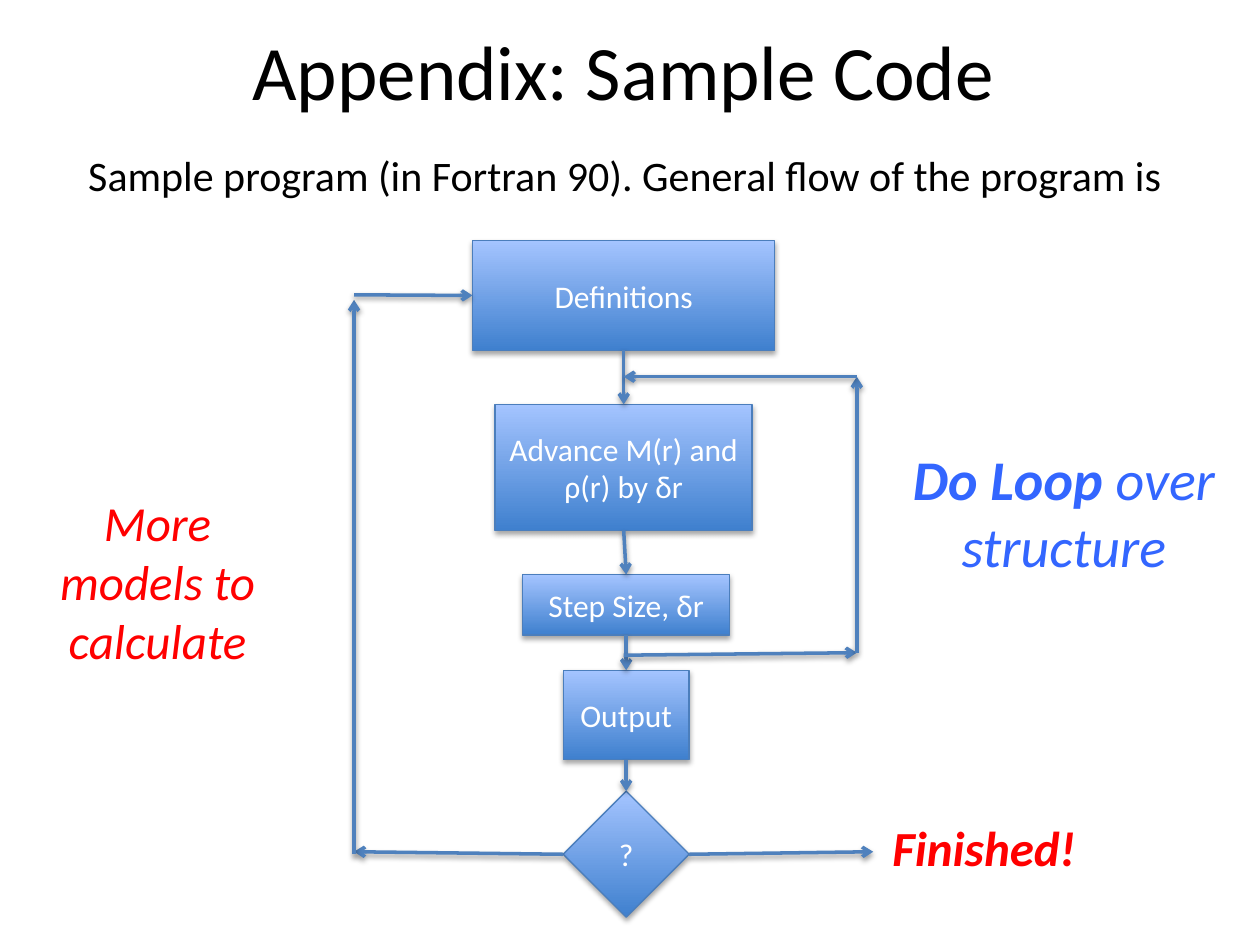
from dataclasses import dataclass

from lxml import etree
from pptx import Presentation
from pptx.dml.color import RGBColor
from pptx.enum import shapes, text
from pptx.oxml import ns
from pptx.util import Inches, Pt


@dataclass(frozen=True)
class Theme:
    font: str = "Calibri"
    black: str = "000000"
    white: str = "FFFFFF"
    red: str = "FF0000"
    blue: str = "3366FF"
    box_bottom: str = "3F80CE"
    box_top: str = "A4C4FF"
    box_line: str = "4B7EBC"
    arrow: str = "4F81BD"
    title: int = 44
    loop: int = 32
    label: int = 28
    intro: int = 24
    step: int = 18


theme = Theme()
TOP, LEFT, BOTTOM, RIGHT = range(4)


def write(frame, runs, size, color):
    """Fill a frame with one centred paragraph; runs are (words, bold, italic)."""
    frame.word_wrap = True
    paragraph = frame.paragraphs[0]
    paragraph.alignment = text.PP_ALIGN.CENTER
    for words, bold, italic in runs:
        run = paragraph.add_run()
        run.text = words
        run.font.name = theme.font
        run.font.size = Pt(size)
        run.font.bold = bold
        run.font.italic = italic
        run.font.color.rgb = RGBColor.from_string(color)


def cast_shadow(item, distance, opacity):
    """Give a shape or connector a soft shadow straight below it."""
    properties = item._element.spPr
    for old in properties.findall(ns.qn("a:effectLst")):
        properties.remove(old)
    effects = etree.SubElement(properties, ns.qn("a:effectLst"))
    shadow = etree.SubElement(
        effects, ns.qn("a:outerShdw"), blurRad=str(Pt(3.1)),
        dist=str(Pt(distance)), dir="5400000", rotWithShape="0")
    shade = etree.SubElement(shadow, ns.qn("a:srgbClr"), val=theme.black)
    etree.SubElement(shade, ns.qn("a:alpha"), val=str(opacity * 1000))


deck = Presentation()
deck.slide_width, deck.slide_height = Inches(10), Inches(7.5)
slide = deck.slides.add_slide(deck.slide_layouts[5])

# Title
title = slide.shapes.title
title.left, title.top = Inches(0.7), Inches(0.07)
title.width, title.height = Inches(8.5), Inches(0.96)
title.text_frame.vertical_anchor = text.MSO_ANCHOR.MIDDLE
write(title.text_frame, [("Appendix: Sample Code", False, False)], theme.title, theme.black)

# Introduction and side labels
labels = [
    (0.34, 1.14, 9.24, 0.5, theme.intro, theme.black,
     [("Sample program (in Fortran 90). General flow of the program is", False, False)]),
    (7.13, 3.48, 2.63, 1.18, theme.loop, theme.blue,
     [("Do Loop ", True, True), ("over structure", False, True)]),
    (0.16, 3.86, 2.18, 1.51, theme.label, theme.red,
     [("More models to calculate", False, True)]),
    (6.73, 6.44, 2.16, 0.57, theme.label, theme.red, [("Finished!", True, True)]),
]
for left, top, width, height, size, color, runs in labels:
    label = slide.shapes.add_textbox(Inches(left), Inches(top), Inches(width), Inches(height))
    write(label.text_frame, runs, size, color)
    label.text_frame.auto_size = text.MSO_AUTO_SIZE.SHAPE_TO_FIT_TEXT

# Program steps, from top to bottom
RECT, DIAMOND = shapes.MSO_SHAPE.RECTANGLE, shapes.MSO_SHAPE.DIAMOND
steps = []
for words, kind, center, top, width, height in [
    ("Definitions", RECT, 4.95, 1.91, 2.4, 0.87),
    ("Advance M(r) and ρ(r) by δr", RECT, 4.95, 3.21, 2.04, 1),
    ("Step Size, δr", RECT, 4.97, 4.56, 1.64, 0.48),
    ("Output", RECT, 4.97, 5.32, 1, 0.71),
    ("?", DIAMOND, 4.97, 6.28, 1, 1),
]:
    step = slide.shapes.add_shape(
        kind, Inches(center - width / 2), Inches(top), Inches(width), Inches(height))
    step.fill.gradient()
    step.fill.gradient_angle = 90
    for stop, color, position in zip(
            step.fill.gradient_stops, (theme.box_bottom, theme.box_top), (0, 1)):
        stop.color.rgb = RGBColor.from_string(color)
        stop.position = position
    step.line.color.rgb = RGBColor.from_string(theme.box_line)
    step.line.width = Pt(0.75)
    cast_shadow(step, 1.8, 35)
    step.text_frame.vertical_anchor = text.MSO_ANCHOR.MIDDLE
    write(step.text_frame, [(words, False, False)], theme.step, theme.white)
    steps.append(step)
definitions, decision = steps[0], steps[-1]

# Arrows: each end is a point or a (step, side) pair
loop_x, restart_x = 6.8, 2.81
arrows = [((above, BOTTOM), (below, TOP)) for above, below in zip(steps, steps[1:])]
arrows += [
    # Do loop
    ((4.95, 5.2), (loop_x, 5.18)),
    ((loop_x, 5.18), (loop_x, 2.99)),
    ((loop_x, 2.99), (4.95, 2.99)),
    # Next model
    ((decision, LEFT), (restart_x, 6.76)),
    ((restart_x, 6.78), (restart_x, 2.38)),
    ((restart_x, 2.34), (definitions, LEFT)),
    # Finish
    ((decision, RIGHT), (6.93, 6.76)),
]
for start, end in arrows:
    points = [Inches(value) for point in (start, end)
              for value in ((0, 0) if point[0] in steps else point)]
    arrow = slide.shapes.add_connector(shapes.MSO_CONNECTOR.STRAIGHT, *points)
    if start[0] in steps:
        arrow.begin_connect(*start)
    if end[0] in steps:
        arrow.end_connect(*end)
    arrow.line.color.rgb = RGBColor.from_string(theme.arrow)
    arrow.line.width = Pt(2)
    etree.SubElement(arrow.line._get_or_add_ln(), ns.qn("a:tailEnd"), type="arrow")
    cast_shadow(arrow, 1.6, 38)

deck.save("out.pptx")
